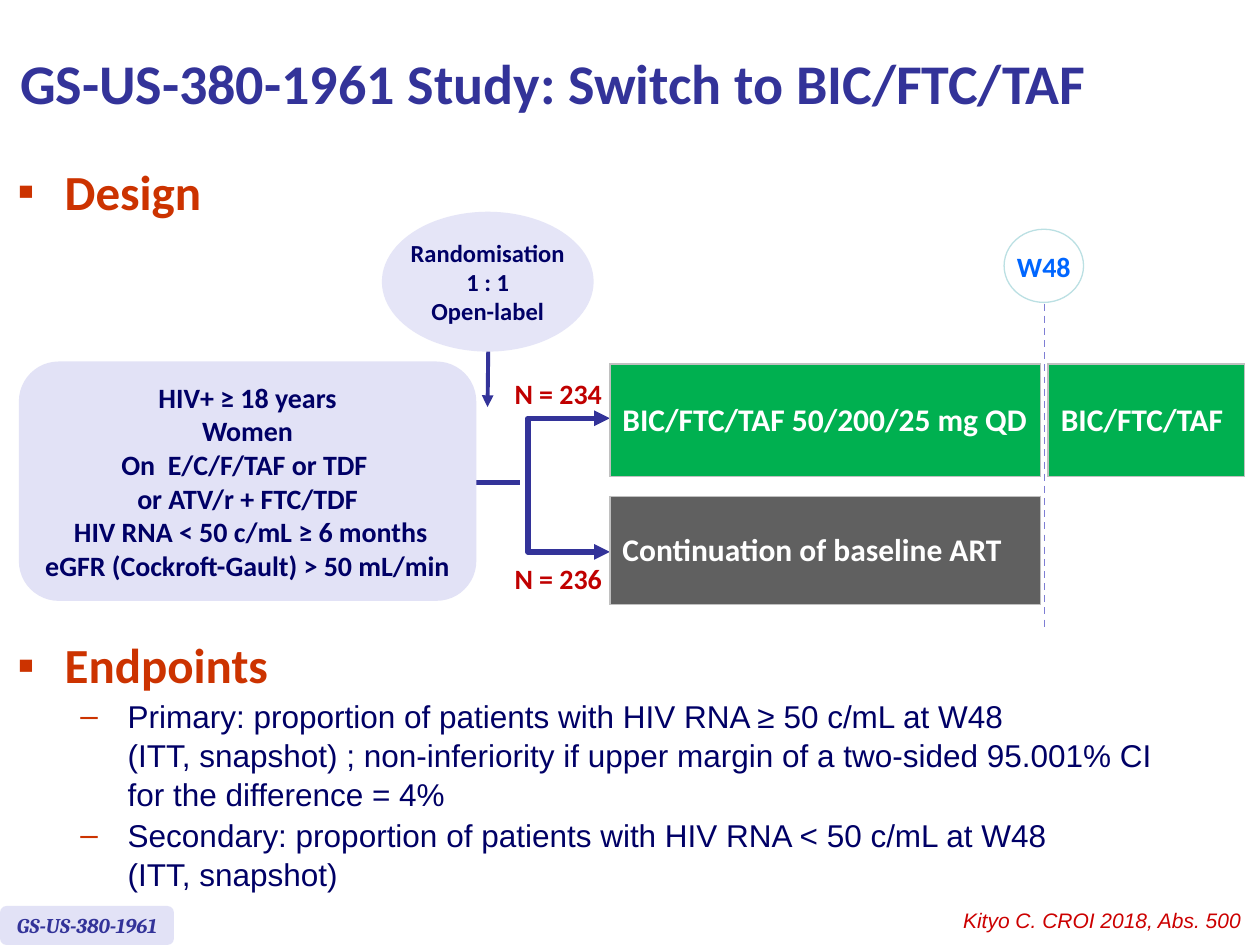
from lxml import etree
from pptx import Presentation
from pptx.dml.color import RGBColor
from pptx.enum import dml, shapes, text
from pptx.oxml import ns
from pptx.util import Pt

COLOURS = {
    "navy": "000066", "indigo": "333399", "lavender": "E2E2F6", "pale": "E5E5F7",
    "rust": "CC3300", "red": "C00000", "citation": "CC0000", "white": "FFFFFF",
    "green": "00B050", "grey": "606060", "border": "C0C0C0", "blue": "0066FF",
    "aqua": "BBE0E3", "violet": "7E7ED4",
}
CENTER = text.PP_ALIGN.CENTER
LEFT = text.PP_ALIGN.LEFT


def colour(name):
    return RGBColor.from_string(COLOURS[name])


def add_xml(parent, tag, **attributes):
    return etree.SubElement(parent, ns.qn(tag), attributes)


def style(paragraph, size, ink, font="Calibri", bold=True, italic=False, align=LEFT):
    paragraph.alignment = align
    paragraph.font.name = font
    paragraph.font.size = Pt(size)
    paragraph.font.bold = bold
    paragraph.font.italic = italic
    paragraph.font.color.rgb = colour(ink)


def write(frame, lines, size, ink, **look):
    for index, line in enumerate(lines):
        paragraph = frame.add_paragraph() if index else frame.paragraphs[0]
        paragraph.text = line
        style(paragraph, size, ink, **look)


def add_title(slide, wording):
    title = slide.shapes.title
    title.left, title.top, title.width, title.height = Pt(4.3), Pt(3.6), Pt(645), Pt(87)
    frame = title.text_frame
    frame.auto_size = text.MSO_AUTO_SIZE.NONE
    frame.vertical_anchor = text.MSO_ANCHOR.MIDDLE
    write(frame, [wording], 32, "indigo")


def add_label(slide, box, wording, size, ink, wrap=False, **look):
    frame = slide.shapes.add_textbox(*map(Pt, box)).text_frame
    frame.word_wrap = wrap
    write(frame, [wording], size, ink, **look)


def add_bubble(slide, preset, box, fill, lines, size, ink, outline=None, **look):
    bubble = slide.shapes.add_shape(preset, *map(Pt, box))
    bubble.shadow.inherit = False
    bubble.fill.solid()
    bubble.fill.fore_color.rgb = colour(fill)
    if outline:
        bubble.line.color.rgb = colour(outline)
        bubble.line.width = Pt(0.75)
    else:
        bubble.line.fill.background()
    frame = bubble.text_frame
    frame.word_wrap = False
    frame.vertical_anchor = text.MSO_ANCHOR.MIDDLE
    write(frame, lines, size, ink, align=CENTER, **look)


def add_outline(slide, box, heading, endpoints=()):
    frame = slide.shapes.add_textbox(*map(Pt, box)).text_frame
    frame.word_wrap = True
    for index, wording in enumerate([heading, *endpoints]):
        paragraph = frame.add_paragraph() if index else frame.paragraphs[0]
        paragraph.text = wording
        properties = paragraph._p.get_or_add_pPr()
        properties.set("marL", str(Pt(63 if index else 27)))
        properties.set("indent", str(-Pt(27)))
        if index:
            paragraph.level = 1
            paragraph.space_before = Pt(0.8)
            paragraph.line_spacing = 1.04
        bullet_colour = add_xml(properties, "a:buClr")
        add_xml(bullet_colour, "a:srgbClr", val=COLOURS["rust"])
        add_xml(properties, "a:buFont", typeface="Arial")
        add_xml(properties, "a:buChar", char="–" if index else "▪")
        if index:
            style(paragraph, 18, "navy", font="Arial", bold=False)
        else:
            style(paragraph, 28, "rust")


def add_arm(slide, box, wording, fill):
    table = slide.shapes.add_table(1, 1, *map(Pt, box)).table
    cell = table.cell(0, 0)
    cell.vertical_anchor = text.MSO_ANCHOR.MIDDLE
    properties = cell._tc.get_or_add_tcPr()
    for side in "LRTB":
        border = add_xml(properties, f"a:ln{side}", w=str(Pt(1)))
        border_fill = add_xml(border, "a:solidFill")
        add_xml(border_fill, "a:srgbClr", val=COLOURS["border"])
    cell.fill.solid()
    cell.fill.fore_color.rgb = colour(fill)
    write(cell.text_frame, [wording], 18, "white")


def set_line(line, ink, width, arrows=()):
    line.color.rgb = colour(ink)
    line.width = Pt(width)
    for end in arrows:
        add_xml(line._get_or_add_ln(), f"a:{end}", type="triangle")


def add_line(slide, start, finish, ink, width, arrows=(), dash=None):
    connector = slide.shapes.add_connector(
        shapes.MSO_CONNECTOR.STRAIGHT, *map(Pt, (*start, *finish)))
    if dash:
        connector.line.dash_style = dash
    set_line(connector.line, ink, width, arrows)
    add_xml(connector._element.spPr, "a:effectLst")


def add_split(slide, stem, tip, upper, lower):
    builder = slide.shapes.build_freeform(Pt(tip), Pt(upper))
    corners = [(stem, upper), (stem, lower), (tip, lower)]
    builder.add_line_segments([(Pt(x), Pt(y)) for x, y in corners], close=False)
    split = builder.convert_to_shape()
    split.shadow.inherit = False
    split.fill.background()
    set_line(split.line, "indigo", 3, ("headEnd", "tailEnd"))


def main():
    deck = Presentation()
    deck.slide_width, deck.slide_height = Pt(720), Pt(540)
    slide = deck.slides.add_slide(deck.slide_layouts[5])
    rounded = shapes.MSO_SHAPE.ROUNDED_RECTANGLE
    oval = shapes.MSO_SHAPE.OVAL

    add_title(slide, "GS-US-380-1961 Study: Switch to BIC/FTC/TAF")
    add_outline(slide, (2.9, 88.6, 142.6, 45.4), "Design")
    add_outline(slide, (2.9, 359.3, 687.6, 154.8), "Endpoints", [
        "Primary: proportion of patients with HIV RNA ≥ 50 c/mL at W48 \n"
        "(ITT, snapshot) ; non-inferiority if upper margin of a two-sided 95.001% CI \n"
        "for the difference = 4%",
        "Secondary: proportion of patients with HIV RNA < 50 c/mL at W48 \n"
        "(ITT, snapshot)",
    ])

    add_line(slide, (254.9, 275.8), (297.4, 275.8), "indigo", 3)
    add_bubble(slide, rounded, (10.8, 206.6, 261.4, 136.8), "lavender", [
        "HIV+ ≥ 18 years",
        "Women",
        "On  E/C/F/TAF or TDF \nor ATV/r + FTC/TDF",
        " HIV RNA < 50 c/mL ≥ 6 months",
        "eGFR (Cockroft-Gault) > 50 mL/min",
    ], 16, "navy")
    add_bubble(slide, oval, (218.2, 121, 121, 79.9), "pale",
               ["Randomisation", "1 : 1", "Open-label"], 14, "navy")
    add_line(slide, (279, 200.9), (278.6, 232.6), "indigo", 2.25, ("tailEnd",))
    add_split(slide, 301.7, 348.5, 239, 315.4)

    add_arm(slide, (348.5, 208.1, 246.2, 64.1), "BIC/FTC/TAF 50/200/25 mg QD", "green")
    add_arm(slide, (348.5, 283.7, 246.2, 61.9), "Continuation of baseline ART", "grey")
    add_arm(slide, (599, 208.1, 112.3, 64.1), "BIC/FTC/TAF", "green")
    for top, count in [(211.7, "N = 234"), (317.5, "N = 236")]:
        add_label(slide, (286.6, top, 64.8, 26.6), count, 16, "red", align=CENTER)

    add_bubble(slide, oval, (573.8, 131, 45.4, 41.8), "white", ["W48"], 16, "blue",
               outline="aqua")
    add_line(slide, (596.9, 173.5), (596.9, 360.7), "violet", 1,
             dash=dml.MSO_LINE.DASH)

    add_bubble(slide, rounded, (0, 517.7, 99.4, 22.3), "lavender", ["GS-US-380-1961"],
               12, "indigo", font="Cambria", italic=True)
    add_label(slide, (464.4, 514.8, 252, 21.6), "Kityo C. CROI 2018, Abs. 500", 12,
              "citation", wrap=True, font="Arial", bold=False, italic=True,
              align=text.PP_ALIGN.RIGHT)
    deck.save("out.pptx")


if __name__ == "__main__":
    main()
